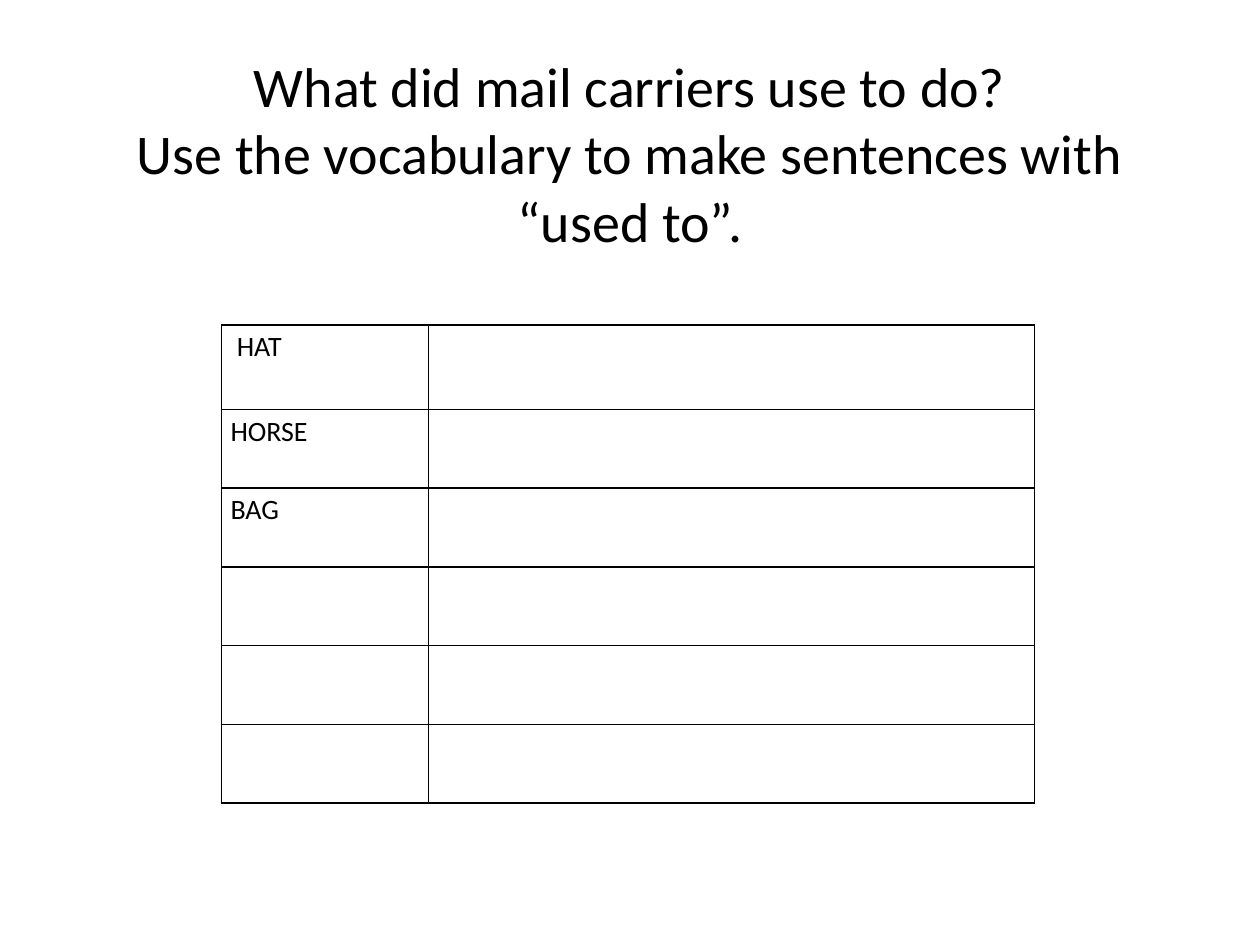
from pptx import Presentation
from pptx.dml.color import RGBColor
from pptx.enum.text import MSO_ANCHOR as Anchor, PP_ALIGN as Align
from pptx.oxml import parse_xml
from pptx.oxml.ns import nsdecls
from pptx.util import Inches, Pt

INK = "000000"
FONT = "Calibri"
QUESTION = ["What did mail carriers use to do?",
            "Use the vocabulary to make sentences with “used to”."]
VOCABULARY = ["HAT", "HORSE", "BAG", "", "", ""]
COLUMN_WIDTHS = [1.64, 4.81]
FIRST_ROW, OTHER_ROWS = 0.67, 0.625


def color(code):
    """Return the colour for a hex string."""
    return RGBColor.from_string(code)


def add_words(paragraph, words, size):
    """Add one run of words in the slide's font."""
    run = paragraph.add_run()
    run.text = words
    run.font.name, run.font.size = FONT, Pt(size)
    run.font.color.rgb = color(INK)


def add_heading(slide, lines):
    """Add the centred heading, one line break between its lines."""
    heading = slide.shapes.add_textbox(Inches(0.5), Inches(0.3), Inches(9), Inches(1.25))
    frame = heading.text_frame
    frame.word_wrap = True
    frame.vertical_anchor = Anchor.MIDDLE
    frame.margin_top = Inches(0.62)
    paragraph = frame.paragraphs[0]
    paragraph.alignment = Align.CENTER
    for number, line in enumerate(lines):
        if number:
            paragraph.add_line_break()
        add_words(paragraph, line, 32)


def outline_cell(cell):
    """Leave the cell unfilled and rule its four sides."""
    cell.fill.background()
    properties = cell._tc.get_or_add_tcPr()
    for position, side in enumerate(("lnL", "lnR", "lnT", "lnB")):
        properties.insert(position, parse_xml(
            f'<a:{side} {nsdecls("a")} w="{Pt(1)}"><a:solidFill>'
            f'<a:srgbClr val="{INK}"/></a:solidFill></a:{side}>'))


def add_word_cell(cell, word, indent):
    """Write a vocabulary word at the top left of its cell."""
    cell.margin_left, cell.margin_right = Inches(indent), Inches(0.07)
    cell.margin_top = cell.margin_bottom = 0
    paragraph = cell.text_frame.paragraphs[0]
    paragraph.line_spacing = 1.15
    add_words(paragraph, word, 16)


def add_worksheet(slide, words):
    """Add the table with a word and a space for a sentence in each row."""
    heights = [FIRST_ROW] + [OTHER_ROWS] * (len(words) - 1)
    table = slide.shapes.add_table(
        len(words), len(COLUMN_WIDTHS), Inches(1.76), Inches(2.58),
        Inches(sum(COLUMN_WIDTHS)), Inches(sum(heights))).table
    table.first_row = table.horz_banding = False
    for column, width in zip(table.columns, COLUMN_WIDTHS):
        column.width = Inches(width)
    for number, (row, height, word) in enumerate(zip(table.rows, heights, words)):
        row.height = Inches(height)
        for cell in row.cells:
            outline_cell(cell)
        if word:
            add_word_cell(row.cells[0], word, 0.07 if number else 0.12)


def main():
    """Build the slide and save it."""
    deck = Presentation()
    deck.slide_width, deck.slide_height = Inches(10), Inches(7.5)
    slide = deck.slides.add_slide(deck.slide_layouts[6])
    add_heading(slide, QUESTION)
    add_worksheet(slide, VOCABULARY)
    deck.save("out.pptx")


if __name__ == "__main__":
    main()
